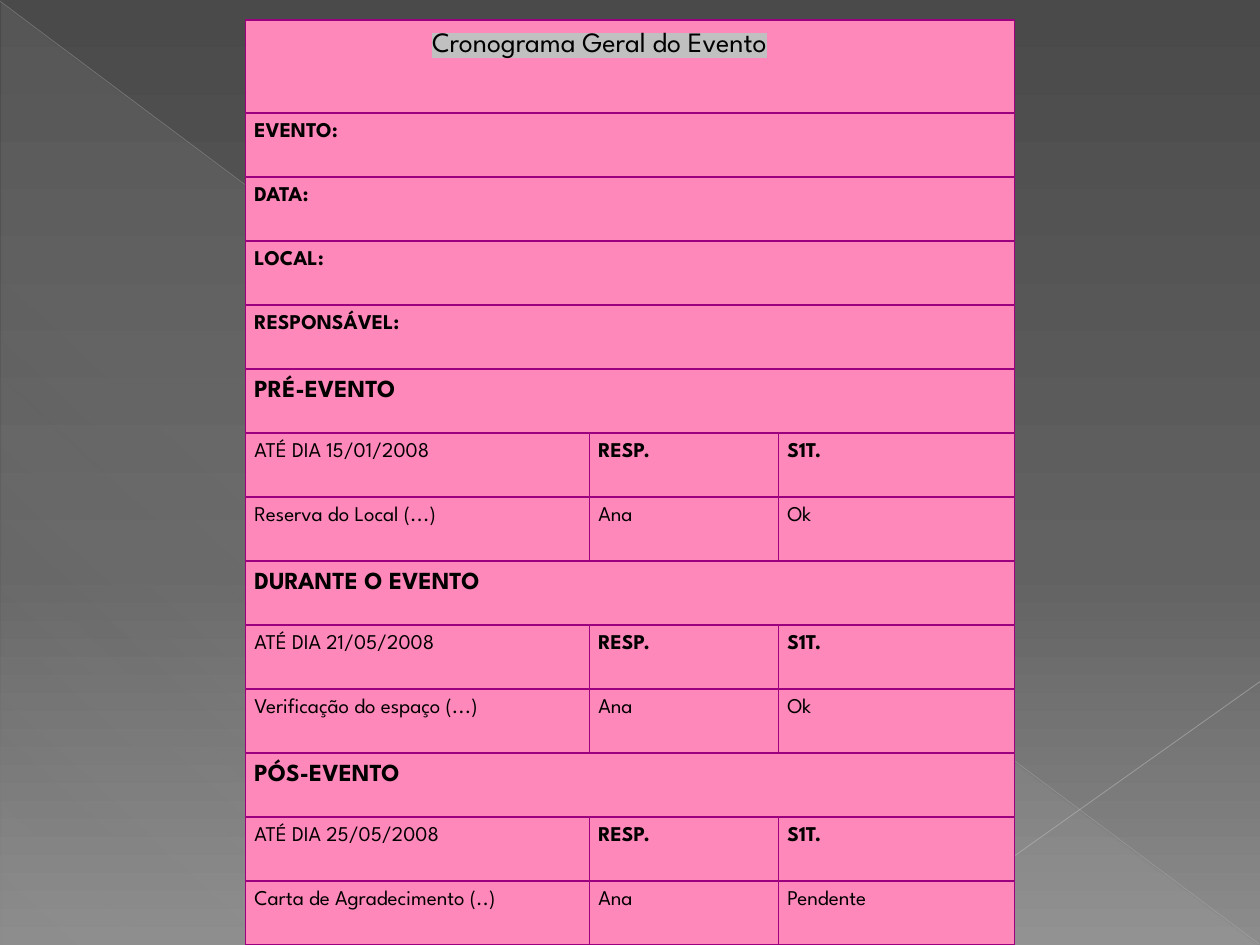
"""Build the general event schedule slide."""
from dataclasses import dataclass
from typing import NamedTuple

from lxml.etree import SubElement
from pptx import Presentation
from pptx.dml.color import RGBColor
from pptx.enum.shapes import MSO_CONNECTOR, MSO_SHAPE
from pptx.oxml.ns import qn
from pptx.util import Pt


@dataclass(frozen=True)
class Theme:
    font: str = "League Spartan"
    text: str = "000000"
    cell: str = "FF88BA"
    border: str = "9C007F"
    highlight: str = "C0C0C0"
    title_size: float = 16
    heading_size: float = 14
    body_size: float = 12


class Stop(NamedTuple):
    position: int
    color: str
    opacity: int = 100


class Ray(NamedTuple):
    start: tuple[float, float]
    end: tuple[float, float]
    color: str
    width: float
    opacity: int


class Style(NamedTuple):
    size: float
    bold: bool = False
    indent: float = 0
    highlight: str = ""


class Phase(NamedTuple):
    name: str
    deadline: str
    task: str
    person: str
    status: str


THEME = Theme()
TITLE = Style(THEME.title_size, indent=101.5, highlight=THEME.highlight)
HEADING = Style(THEME.heading_size, bold=True)
LABEL = Style(THEME.body_size, bold=True)
BODY = Style(THEME.body_size)

BACKGROUND = [Stop(0, "4A4A4A"), Stop(60, "626262"), Stop(100, "8C8C8C")]
SHEEN = [Stop(0, "D2D2D2", 10), Stop(70, "D2D2D2", 8), Stop(100, "D2D2D2", 1)]
RAYS = [
    Ray((0, 0.7), (719.3, 539.3), "BFBFBF", 0.39, 35),
    Ray((720, 389.5), (509, 539.3), "C6C6C6", 0.47, 45),
]
FIELDS = ["EVENTO:", "DATA:", "LOCAL:", "RESPONSÁVEL:"]
PHASES = [
    Phase("PRÉ-EVENTO", "ATÉ DIA 15/01/2008", "Reserva do Local (...)", "Ana", "Ok"),
    Phase("DURANTE O EVENTO", "ATÉ DIA 21/05/2008", "Verificação do espaço (...)", "Ana", "Ok"),
    Phase("PÓS-EVENTO", "ATÉ DIA 25/05/2008", "Carta de Agradecimento (..)", "Ana", "Pendente"),
]
COLUMN_WIDTHS = [196.56, 108, 134.64]
TITLE_HEIGHT, ROW_HEIGHT = 53.28, 36.57


def set_attributes(target, values: dict) -> None:
    for name, value in values.items():
        setattr(target, name, value)


def add_color(parent, color: str, opacity: int = 100) -> None:
    element = SubElement(parent, qn("a:srgbClr"), val=color)
    if opacity < 100:
        SubElement(element, qn("a:alpha"), val=str(opacity * 1000))


def fill_gradient(fill, owner, stops: list[Stop], angle: float) -> None:
    fill.gradient()
    fill.gradient_angle = 360 - angle
    stop_list = owner.find(".//" + qn("a:gsLst"))
    for old in list(stop_list):
        stop_list.remove(old)
    for stop in stops:
        element = SubElement(stop_list, qn("a:gs"), pos=str(stop.position * 1000))
        add_color(element, stop.color, stop.opacity)


def draw_backdrop(page) -> None:
    fill_gradient(page.background.fill, page._element, BACKGROUND, 90)
    triangle = page.shapes.add_shape(
        MSO_SHAPE.RIGHT_TRIANGLE, Pt(0.7), Pt(1.4), Pt(718.6), Pt(538.6))
    triangle.shadow.inherit = False
    triangle.line.fill.background()
    fill_gradient(triangle.fill, triangle._element, SHEEN, 133)
    for ray in RAYS:
        draw_ray(page, ray)


def draw_ray(page, ray: Ray) -> None:
    points = [Pt(value) for value in (*ray.start, *ray.end)]
    line = page.shapes.add_connector(MSO_CONNECTOR.STRAIGHT, *points)
    line.line.width = Pt(ray.width)
    line.line.color.rgb = RGBColor.from_string(ray.color)
    color = line._element.spPr.find(".//" + qn("a:srgbClr"))
    SubElement(color, qn("a:alpha"), val=str(ray.opacity * 1000))
    SubElement(line._element.spPr, qn("a:effectLst"))


def add_borders(cell) -> None:
    properties = cell._tc.get_or_add_tcPr()
    for side in ("a:lnL", "a:lnR", "a:lnT", "a:lnB"):
        border = SubElement(properties, qn(side), w=str(Pt(1)))
        add_color(SubElement(border, qn("a:solidFill")), THEME.border)


def write_cell(cell, text: str, style: Style) -> None:
    set_attributes(cell, {"margin_left": Pt(5), "margin_right": Pt(5),
                          "margin_top": 0, "margin_bottom": 0})
    add_borders(cell)
    cell.fill.solid()
    cell.fill.fore_color.rgb = RGBColor.from_string(THEME.cell)
    para = cell.text_frame.paragraphs[0]
    set_attributes(para, {"line_spacing": 1.5, "space_after": Pt(10)})
    if style.indent:
        para._p.get_or_add_pPr().set("marL", str(Pt(style.indent)))
    span = para.add_run()
    span.text = text
    set_attributes(span.font, {"name": THEME.font, "size": Pt(style.size), "bold": style.bold})
    span.font.color.rgb = RGBColor.from_string(THEME.text)
    if style.highlight:
        properties = span._r.get_or_add_rPr()
        highlight = SubElement(properties, qn("a:highlight"))
        add_color(highlight, style.highlight)
        properties.find(qn("a:solidFill")).addnext(highlight)


def schedule_rows() -> list[list[tuple[str, Style]]]:
    rows = [[("Cronograma Geral do Evento", TITLE)]]
    rows += [[(field, LABEL)] for field in FIELDS]
    for phase in PHASES:
        rows += [
            [(phase.name, HEADING)],
            [(phase.deadline, BODY), ("RESP.", LABEL), ("S1T.", LABEL)],
            [(phase.task, BODY), (phase.person, BODY), (phase.status, BODY)],
        ]
    return rows


def draw_schedule(page) -> None:
    rows = schedule_rows()
    height = TITLE_HEIGHT + ROW_HEIGHT * (len(rows) - 1)
    frame = page.shapes.add_table(len(rows), len(COLUMN_WIDTHS), Pt(140.4), Pt(11.4),
                                  Pt(sum(COLUMN_WIDTHS)), Pt(height))
    table = frame.table
    set_attributes(table, {"first_row": False, "horz_banding": False})
    for column, width in zip(table.columns, COLUMN_WIDTHS):
        column.width = Pt(width)
    for index, entries in enumerate(rows):
        table.rows[index].height = Pt(ROW_HEIGHT if index else TITLE_HEIGHT)
        if len(entries) == 1:
            table.cell(index, 0).merge(table.cell(index, len(COLUMN_WIDTHS) - 1))
        for position, (text, style) in enumerate(entries):
            write_cell(table.cell(index, position), text, style)


def main() -> None:
    deck = Presentation()
    set_attributes(deck, {"slide_width": Pt(720), "slide_height": Pt(540)})
    page = deck.slides.add_slide(deck.slide_layouts[6])
    draw_backdrop(page)
    draw_schedule(page)
    deck.save("out.pptx")


if __name__ == "__main__":
    main()
